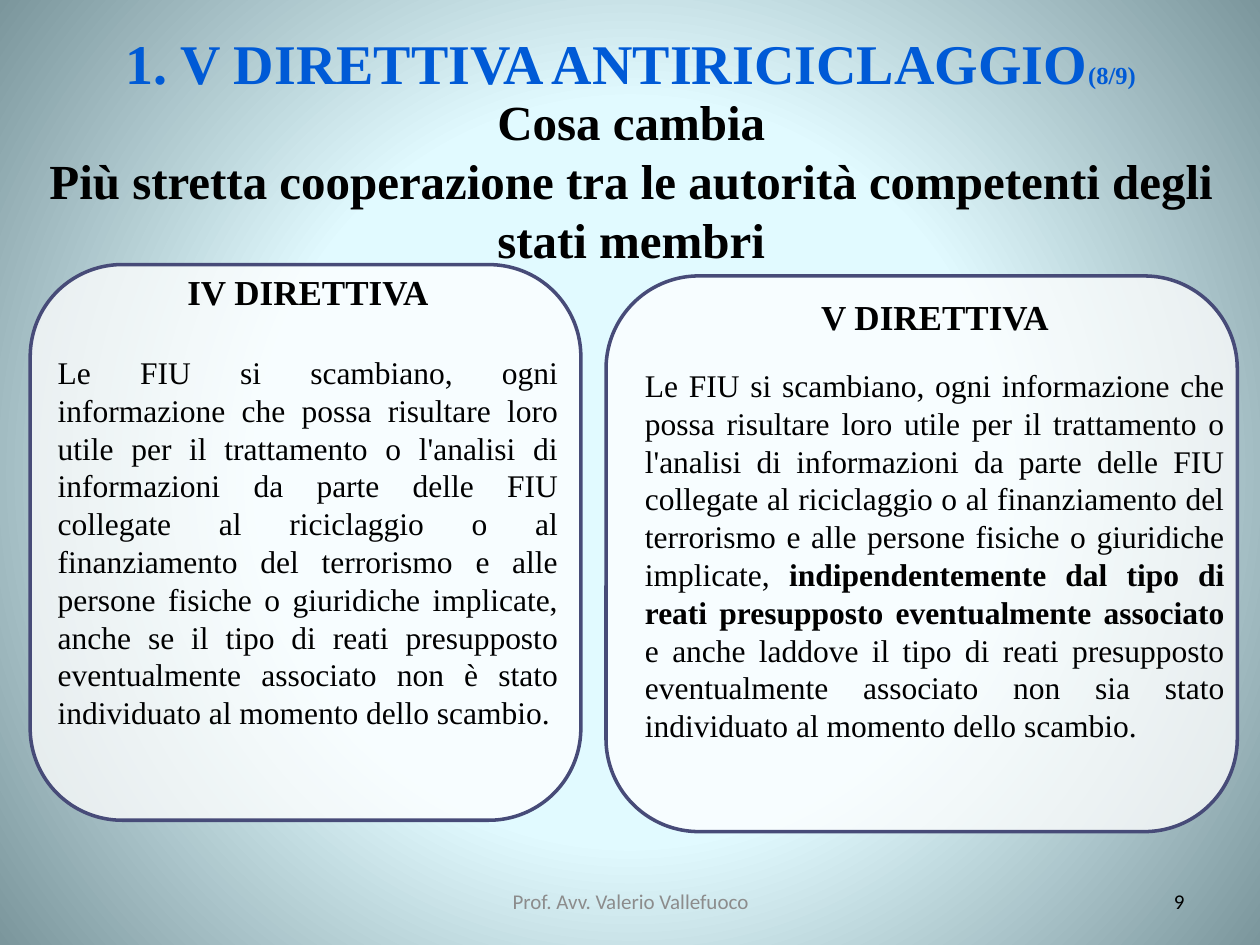
from lxml import etree
from pptx import Presentation
from pptx.dml.color import RGBColor
from pptx.enum.shapes import MSO_SHAPE
from pptx.enum.text import MSO_ANCHOR as Anchor, MSO_AUTO_SIZE as AutoSize, PP_ALIGN as Align
from pptx.oxml.ns import qn
from pptx.util import Inches, Pt

BLACK = RGBColor(0x00, 0x00, 0x00)
WHITE = RGBColor(0xFF, 0xFF, 0xFF)
GREY = RGBColor(0x8C, 0x8C, 0x8C)
BLUE = RGBColor(0x00, 0x5A, 0xD6)
INDIGO = RGBColor(0x47, 0x4B, 0x78)
PALE_CYAN = RGBColor(0xE1, 0xFA, 0xFF)
SLATE = RGBColor(0x7B, 0x96, 0x9C)

SHARED_TEXT = (
    "Le FIU si scambiano, ogni informazione che possa risultare loro utile per il "
    "trattamento o l'analisi di informazioni da parte delle FIU collegate al riciclaggio "
    "o al finanziamento del terrorismo e alle persone fisiche o giuridiche implicate, "
)
FOURTH_TEXT = [
    (SHARED_TEXT + "anche se il tipo di reati presupposto eventualmente associato non è "
     "stato individuato al momento dello scambio.", False),
]
FIFTH_TEXT = [
    (SHARED_TEXT, False),
    ("indipendentemente dal tipo di reati presupposto eventualmente associato ", True),
    ("e anche laddove il tipo di reati presupposto eventualmente associato non sia stato "
     "individuato al momento dello scambio.", False),
]


class SlideBuilder:
    serif = "Times New Roman"
    sans = "Calibri"

    def __init__(self, slide):
        self.slide = slide

    def radial_background(self, inner, inner_position, outer):
        fill = self.slide.background.fill
        fill.gradient()
        stops = fill.gradient_stops
        for stop, color, position in zip(stops, (inner, outer), (inner_position, 1)):
            stop.color.rgb = color
            stop.position = position
        gradient = self.slide._element.find(".//" + qn("a:gradFill"))
        gradient.remove(gradient.find(qn("a:lin")))
        circle = etree.SubElement(gradient, qn("a:path"), path="circle")
        etree.SubElement(circle, qn("a:fillToRect"), l="50000", t="50000", r="50000", b="50000")

    def style(self, paragraph, size, color=BLACK, bold=False, align=Align.CENTER, font=serif):
        paragraph.alignment = align
        paragraph.font.name = font
        paragraph.font.size = Pt(size)
        paragraph.font.bold = bold
        paragraph.font.color.rgb = color

    def title(self, text, counter, left, top, width, height):
        title = self.slide.shapes.title
        title.left, title.top = Inches(left), Inches(top)
        title.width, title.height = Inches(width), Inches(height)
        frame = title.text_frame
        frame.auto_size = AutoSize.NONE
        frame.vertical_anchor = Anchor.TOP
        paragraph = frame.paragraphs[0]
        self.style(paragraph, 32, BLUE, bold=True)
        paragraph.add_run().text = text
        counter_run = paragraph.add_run()
        counter_run.text = counter
        counter_run.font.size = Pt(14)

    def text_box(self, lines, left, top, width, height, size, anchor=Anchor.TOP, **style):
        """Add one paragraph per line, all in the same style, and return the text frame."""
        box = self.slide.shapes.add_textbox(
            Inches(left), Inches(top), Inches(width), Inches(height))
        frame = box.text_frame
        frame.word_wrap = True
        frame.vertical_anchor = anchor
        frame.text = "\n".join(lines)
        for paragraph in frame.paragraphs:
            self.style(paragraph, size, **style)
        return frame

    def panel(self, left, top, width, height):
        shape = self.slide.shapes.add_shape(
            MSO_SHAPE.ROUNDED_RECTANGLE,
            Inches(left), Inches(top), Inches(width), Inches(height))
        shape.shadow.inherit = False
        shape.adjustments[0] = 0.167
        shape.fill.solid()
        shape.fill.fore_color.rgb = WHITE
        color = shape._element.spPr.find(qn("a:solidFill"))[0]
        etree.SubElement(color, qn("a:alpha"), val="76000")
        shape.line.color.rgb = INDIGO
        shape.line.width = Pt(2)

    def directive(self, heading, body, left, top, width, height, gap):
        """Add a heading and, after a gap in points, a justified body of (text, bold) runs."""
        frame = self.text_box([heading], left, top, width, height, 20, bold=True)
        frame.paragraphs[0].space_after = Pt(gap)
        paragraph = frame.add_paragraph()
        self.style(paragraph, 18, align=Align.JUSTIFY)
        for text, bold in body:
            run = paragraph.add_run()
            run.text = text
            run.font.bold = bold


def main():
    presentation = Presentation()
    presentation.slide_width, presentation.slide_height = Inches(10), Inches(7.5)
    title_only = presentation.slide_layouts[5]
    builder = SlideBuilder(presentation.slides.add_slide(title_only))

    builder.radial_background(PALE_CYAN, 0.47, SLATE)
    builder.title("1. V DIRETTIVA ANTIRICICLAGGIO", "(8/9)", 0.2, 0.18, 9.61, 0.64)
    builder.text_box(
        ["Cosa cambia",
         "Più stretta cooperazione tra le autorità competenti degli stati membri"],
        0.01, 0.68, 10, 1.51, 28, bold=True)

    builder.panel(0.24, 2.1, 4.37, 4.41)
    builder.panel(4.81, 2.19, 5.01, 4.41)
    builder.directive("IV DIRETTIVA", FOURTH_TEXT, 0.36, 2.1, 4.17, 4.11, gap=23)
    builder.directive("V DIRETTIVA", FIFTH_TEXT, 5.02, 2.3, 4.8, 3.7, gap=16)

    footer = {"top": 6.95, "height": 0.4, "size": 12, "anchor": Anchor.MIDDLE,
              "font": builder.sans}
    builder.text_box(["Prof. Avv. Valerio Vallefuoco"], left=3.42, width=3.17,
                     color=GREY, **footer)
    builder.text_box(["9"], left=7.17, width=2.33, align=Align.RIGHT, **footer)

    presentation.save("out.pptx")


if __name__ == "__main__":
    main()
